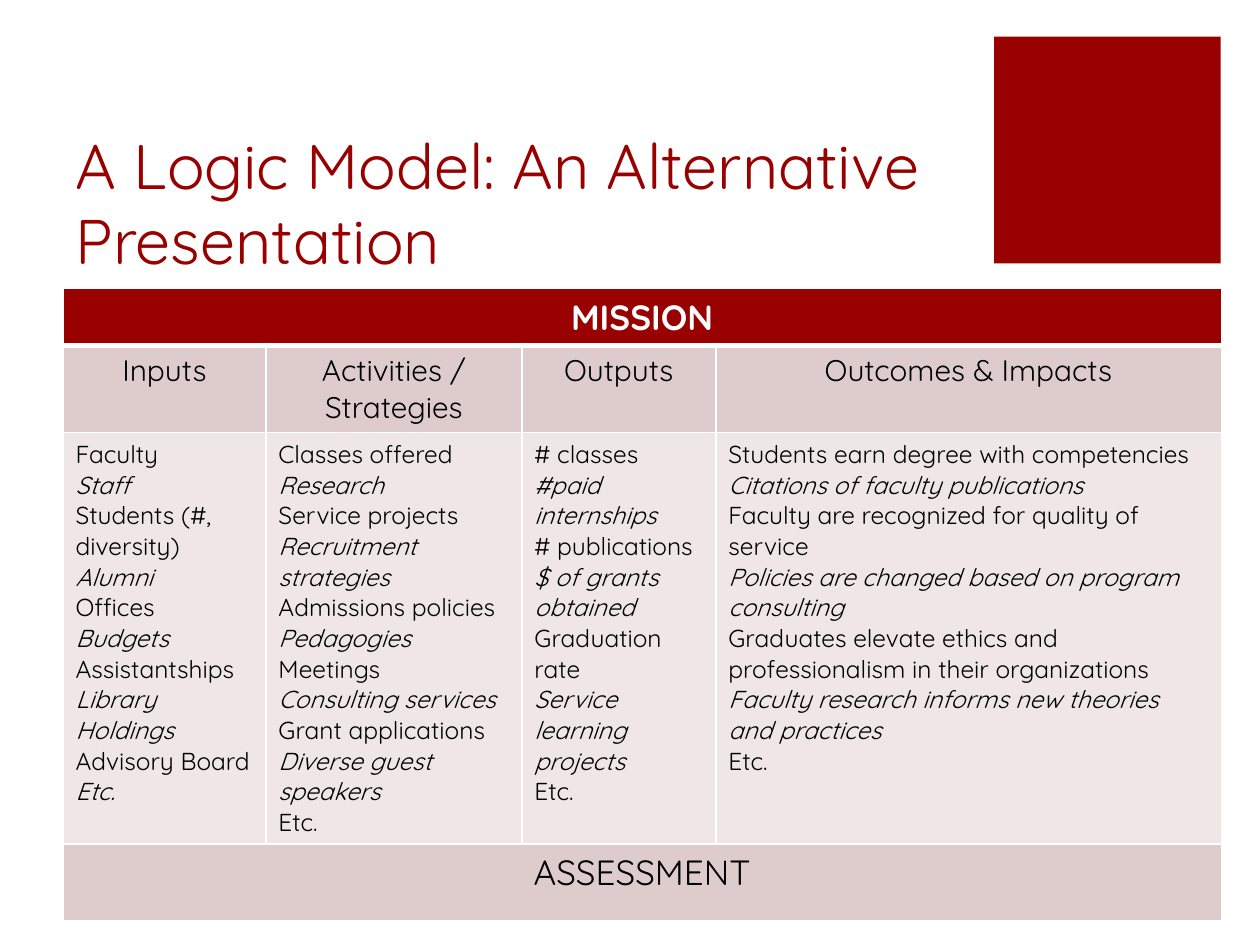
from dataclasses import dataclass

from lxml import etree
from pptx import Presentation
from pptx.dml.color import RGBColor
from pptx.enum.shapes import MSO_SHAPE
from pptx.enum.text import MSO_ANCHOR, MSO_AUTO_SIZE, PP_ALIGN
from pptx.oxml.ns import qn
from pptx.util import Cm, Pt

RECTANGLE = MSO_SHAPE.RECTANGLE
BOTTOM = MSO_ANCHOR.BOTTOM
NO_AUTOFIT = MSO_AUTO_SIZE.NONE
LEFT, CENTER = PP_ALIGN.LEFT, PP_ALIGN.CENTER
TITLE_ONLY = 5


@dataclass(frozen=True)
class Theme:
    font: str = "Quicksand"
    red: str = "990000"
    header: str = "DECCCC"
    body: str = "EFE7E7"
    white: str = "FFFFFF"
    black: str = "000000"
    title_size: int = 36
    band_size: int = 20
    header_size: int = 17
    body_size: int = 14


theme = Theme()


def write_text(frame, text, *, size, color=theme.black, align=LEFT, bold=False, alternate=False):
    for index, line in enumerate(text.split("\n")):
        para = frame.add_paragraph() if index else frame.paragraphs[0]
        para.alignment = align
        span = para.add_run()
        span.text = line
        span.font.name = theme.font
        span.font.size = Pt(size)
        span.font.bold = bold
        span.font.italic = alternate and index % 2 == 1
        span.font.color.rgb = RGBColor.from_string(color)


def format_cell(cell, fill, top, bottom):
    cell.fill.solid()
    cell.fill.fore_color.rgb = RGBColor.from_string(fill)
    properties = cell._tc.get_or_add_tcPr()
    borders = (("a:lnL", 1), ("a:lnR", 1), ("a:lnT", top), ("a:lnB", bottom))
    for position, (tag, width) in enumerate(borders):
        line = etree.Element(qn(tag), w=str(Pt(width)))
        solid = etree.SubElement(line, qn("a:solidFill"))
        etree.SubElement(solid, qn("a:srgbClr"), val=theme.white)
        properties.insert(position, line)


columns = [
    ("Inputs", 4.09, [
        "Faculty", "Staff", "Students (#, diversity)", "Alumni", "Offices", "Budgets",
        "Assistantships", "Library Holdings", "Advisory Board", "Etc.",
    ]),
    ("Activities / Strategies", 5.16, [
        "Classes offered", "Research", "Service projects", "Recruitment strategies",
        "Admissions policies", "Pedagogies", "Meetings", "Consulting services",
        "Grant applications", "Diverse guest speakers", "Etc.",
    ]),
    ("Outputs", 3.91, [
        "# classes", "#paid internships", "# publications", "$ of grants obtained",
        "Graduation rate", "Service learning projects", "Etc.",
    ]),
    ("Outcomes & Impacts", 10.19, [
        "Students earn degree with competencies",
        "Citations of faculty publications",
        "Faculty are recognized for quality of service",
        "Policies are changed based on program consulting",
        "Graduates elevate ethics and professionalism in their organizations",
        "Faculty research informs new theories and practices",
        "Etc.",
    ]),
]
rows = [
    (0.91, theme.red, 1, 3),
    (1.6, theme.header, 3, 1),
    (7.57, theme.body, 1, 1),
    (1.55, theme.header, 1, 1),
]

deck = Presentation()
deck.slide_width, deck.slide_height = Cm(25.4), Cm(19.05)
page = deck.slides.add_slide(deck.slide_layouts[TITLE_ONLY])

square = page.shapes.add_shape(RECTANGLE, Cm(20.04), Cm(0.74), Cm(4.57), Cm(4.57))
square.shadow.inherit = False
square.fill.solid()
square.fill.fore_color.rgb = RGBColor.from_string(theme.red)
square.line.fill.background()

title = page.shapes.title
title.left, title.top, title.width, title.height = Cm(1.27), Cm(2.54), Cm(18.08), Cm(3.18)
title.text_frame.word_wrap = True
title.text_frame.auto_size = NO_AUTOFIT
title.text_frame.vertical_anchor = BOTTOM
write_text(title.text_frame, "A Logic Model: An Alternative Presentation",
           size=theme.title_size, color=theme.red)

table_width = sum(width for _, width, _ in columns)
table_height = sum(height for height, *_ in rows)
table = page.shapes.add_table(len(rows), len(columns), Cm(1.27), Cm(5.82),
                              Cm(table_width), Cm(table_height)).table

for row_index, (height, fill, top, bottom) in enumerate(rows):
    table.rows[row_index].height = Cm(height)
    for column_index in range(len(columns)):
        format_cell(table.cell(row_index, column_index), fill, top, bottom)

for column_index, (heading, width, items) in enumerate(columns):
    table.columns[column_index].width = Cm(width)
    write_text(table.cell(1, column_index).text_frame, heading,
               size=theme.header_size, align=CENTER)
    write_text(table.cell(2, column_index).text_frame, "\n".join(items),
               size=theme.body_size, alternate=True)

bands = [(0, "MISSION", theme.white, True), (3, "ASSESSMENT", theme.black, False)]
for row_index, label, color, bold in bands:
    band = table.cell(row_index, 0)
    band.merge(table.cell(row_index, len(columns) - 1))
    write_text(band.text_frame, label, size=theme.band_size, color=color,
               align=CENTER, bold=bold)

deck.save("out.pptx")
